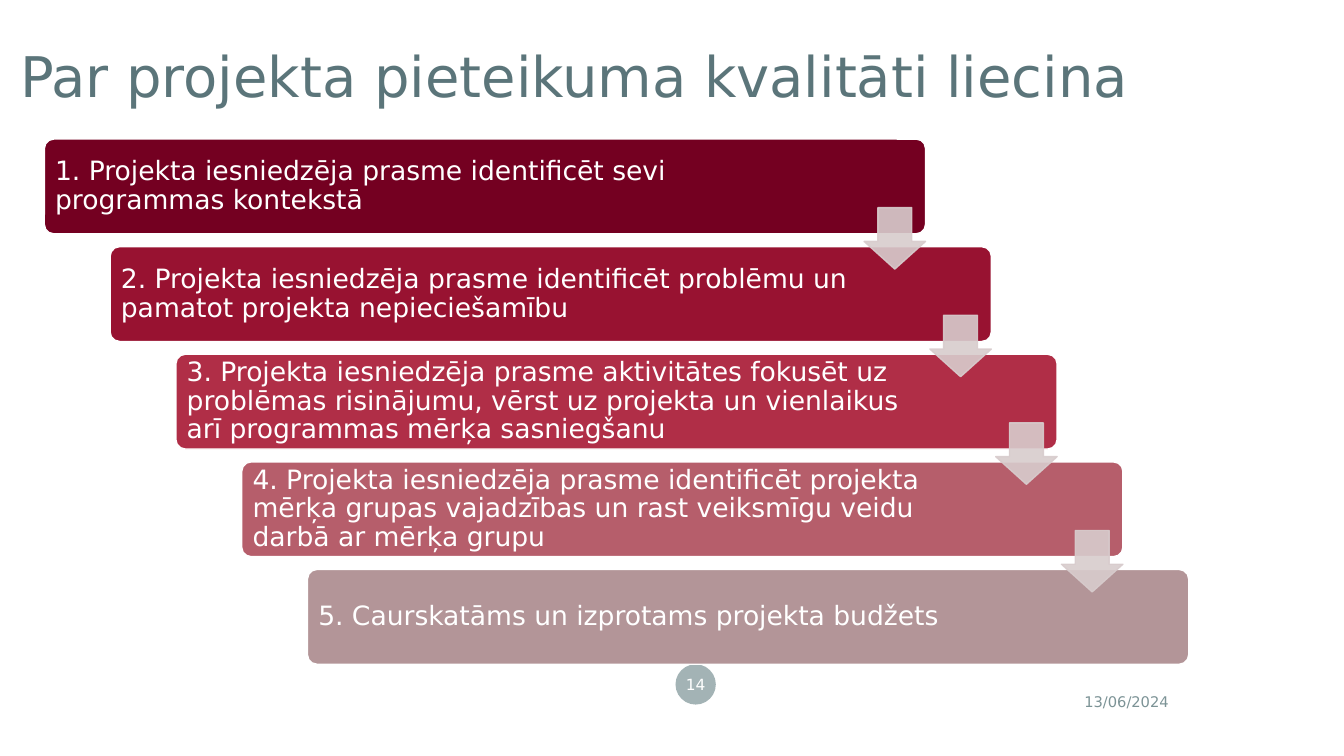
from lxml import etree
from pptx import Presentation
from pptx.dml.color import RGBColor
from pptx.enum.shapes import MSO_SHAPE
from pptx.enum.text import MSO_ANCHOR, MSO_AUTO_SIZE, PP_ALIGN
from pptx.oxml.ns import qn
from pptx.util import Inches, Pt

ROUNDED = MSO_SHAPE.ROUNDED_RECTANGLE
DOWN_ARROW = MSO_SHAPE.DOWN_ARROW
OVAL = MSO_SHAPE.OVAL
MIDDLE = MSO_ANCHOR.MIDDLE
NO_AUTOFIT = MSO_AUTO_SIZE.NONE
LEFT, CENTER, RIGHT = PP_ALIGN.LEFT, PP_ALIGN.CENTER, PP_ALIGN.RIGHT

FONT = "DejaVu Sans"
COLORS = {
    "white": "FFFFFF",
    "title": "5B757A",
    "footer": "7C9396",
    "arrow": "D8CCCD",
}
STEPS = [
    ("1. Projekta iesniedzēja prasme identificēt sevi programmas kontekstā", "740021", 1.14),
    ("2. Projekta iesniedzēja prasme identificēt problēmu un pamatot projekta nepieciešamību", "981231", 1.34),
    ("3. Projekta iesniedzēja prasme aktivitātes fokusēt uz problēmas risinājumu, "
     "vērst uz projekta un vienlaikus arī programmas mērķa sasniegšanu", "B02E47", 1.34),
    ("4. Projekta iesniedzēja prasme identificēt projekta mērķa grupas vajadzības "
     "un rast veiksmīgu veidu darbā ar mērķa grupu", "B65E6B", 1.34),
    ("5. Caurskatāms un izprotams projekta budžets", "B39598", 1.34),
]


def write_text(shape, text, size, color, align=LEFT, margins=(0.1, 0.05, 0.1, 0.05), line_spacing=1.0):
    frame = shape.text_frame
    frame.word_wrap = True
    frame.auto_size = NO_AUTOFIT
    frame.vertical_anchor = MIDDLE
    frame.margin_left, frame.margin_top, frame.margin_right, frame.margin_bottom = map(Inches, margins)
    paragraph = frame.paragraphs[0]
    paragraph.alignment = align
    paragraph.line_spacing = line_spacing
    paragraph.space_before = Pt(0)
    run = paragraph.add_run()
    run.text = text
    run.font.name = FONT
    run.font.size = Pt(size)
    run.font.color.rgb = RGBColor.from_string(color)


def set_opacity(shape, percent):
    for color in shape.fill._xPr.iter(qn("a:srgbClr")):
        etree.SubElement(color, qn("a:alpha"), val=str(percent * 1000))


def add_filled_shape(slide, kind, box, fill, line=None, adjustments=(), opacity=100):
    shape = slide.shapes.add_shape(kind, *map(Inches, box))
    shape.shadow.inherit = False
    shape.fill.solid()
    shape.fill.fore_color.rgb = RGBColor.from_string(fill)
    if line:
        shape.line.color.rgb = RGBColor.from_string(line)
        shape.line.width = Pt(1)
    else:
        shape.line.fill.background()
    for index, value in enumerate(adjustments):
        shape.adjustments[index] = value
    if opacity < 100:
        set_opacity(shape, opacity)
    return shape


def add_title(slide, box, text):
    title = slide.shapes.title
    title.left, title.top, title.width, title.height = map(Inches, box)
    write_text(title, text, 40, COLORS["title"], margins=(0.2,) * 4, line_spacing=0.9)


def add_staircase(slide, box):
    left, top, width, height = box
    step_width, step_height, arrow_size = 8.74, 0.94, 0.61
    shift = (width - step_width) / (len(STEPS) - 1)
    drop = (height - step_height) / (len(STEPS) - 1)
    for index, (text, fill, right_margin) in enumerate(STEPS):
        step = add_filled_shape(
            slide, ROUNDED, (left + index * shift, top + index * drop, step_width, step_height),
            fill, COLORS["white"], (0.1,))
        write_text(step, text, 19, COLORS["white"],
                   margins=(0.08, 0.08, right_margin, 0.08), line_spacing=0.9)
    for index in range(len(STEPS) - 1):
        arrow_left = left + index * shift + step_width - arrow_size
        arrow_top = top + index * drop + 0.68
        add_filled_shape(
            slide, DOWN_ARROW, (arrow_left, arrow_top, arrow_size, arrow_size),
            COLORS["arrow"], COLORS["arrow"], (0.55, 0.45), 90)


def add_footer(slide, box, date, number):
    left, top, width, height = box
    date_width, date_height, badge_size = 3.01, 0.35, 0.4
    date_box = slide.shapes.add_textbox(
        Inches(left + width - date_width), Inches(top + height - date_height),
        Inches(date_width), Inches(date_height))
    write_text(date_box, date, 10.5, COLORS["footer"], RIGHT)
    badge = add_filled_shape(slide, OVAL, (left, top, badge_size, badge_size), COLORS["footer"], opacity=70)
    write_text(badge, number, 11, COLORS["white"], CENTER, (0.02, 0.05, 0.02, 0.05))


def main():
    presentation = Presentation()
    presentation.slide_width = Inches(13.33)
    presentation.slide_height = Inches(7.5)
    slide = presentation.slides.add_slide(presentation.slide_layouts[5])
    add_title(slide, (0, 0.19, 11.97, 1.19), "Par projekta pieteikuma kvalitāti liecina")
    add_footer(slide, (6.7, 6.59, 4.99, 0.55), "13/06/2024", "14")
    add_staircase(slide, (0.44, 1.38, 11.35, 5.21))
    presentation.save("out.pptx")


if __name__ == "__main__":
    main()
